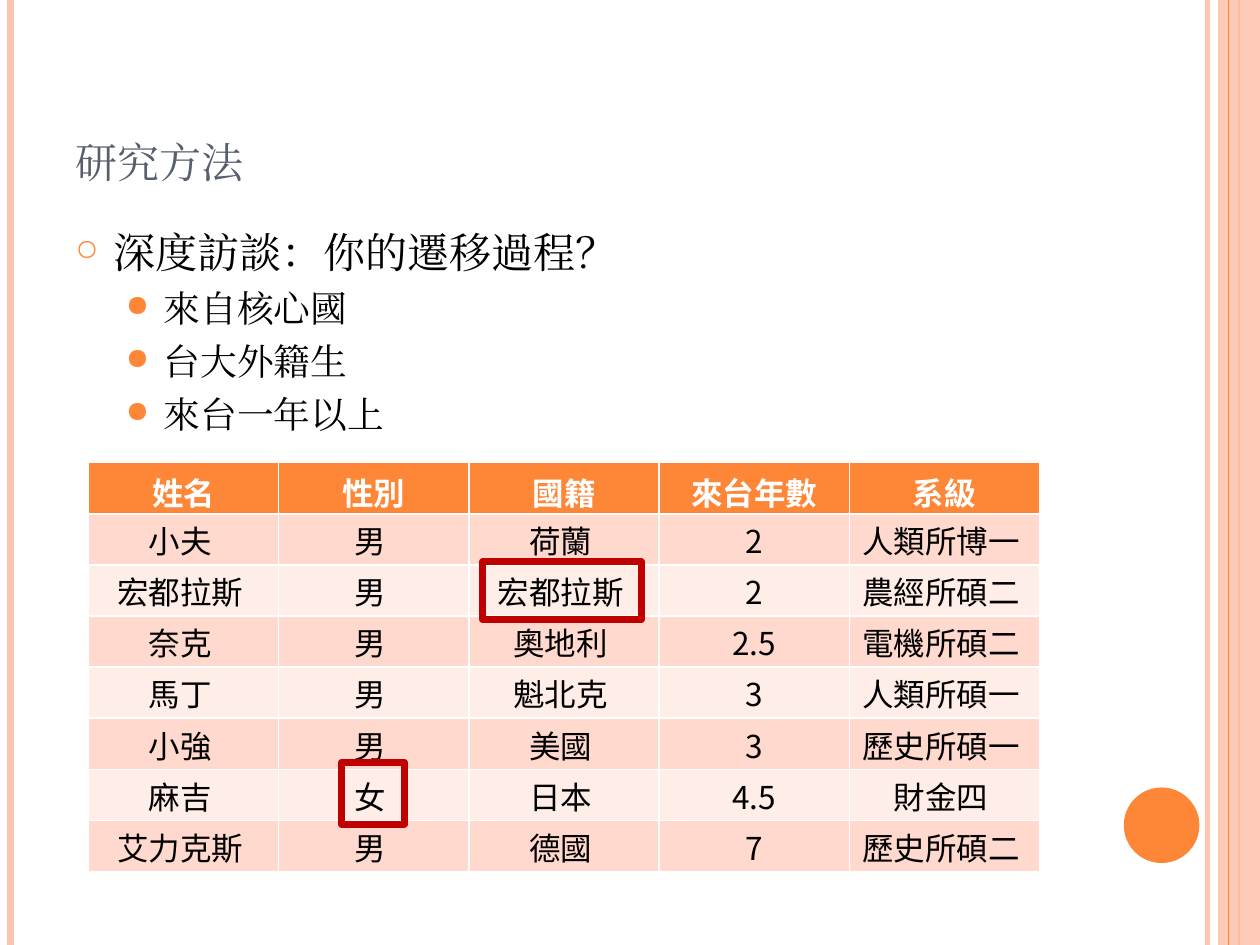
from lxml import etree
from pptx import Presentation
from pptx.dml.color import RGBColor
from pptx.enum import shapes, text
from pptx.oxml.ns import qn
from pptx.util import Pt

ORANGE, PEACH, RED = "FE8637", "FEC3AE", "C00000"
BANDS = ["FFD9CE", "FFEDE8"]
SERIF, CJK = "Cambria", "Noto Sans CJK TC"
HEIGHT = 540

HEADER = ["姓名", "性別", "國籍", "來台年數", "系級"]
STUDENTS = [
    ["小夫", "男", "荷蘭", "2", "人類所博一"],
    ["宏都拉斯", "男", "宏都拉斯", "2", "農經所碩二"],
    ["奈克", "男", "奧地利", "2.5", "電機所碩二"],
    ["馬丁", "男", "魁北克", "3", "人類所碩一"],
    ["小強", "男", "美國", "3", "歷史所碩一"],
    ["麻吉", "女", "日本", "4.5", "財金四"],
    ["艾力克斯", "男", "德國", "7", "歷史所碩二"],
]
CRITERIA = ["來自核心國", "台大外籍生", "來台一年以上"]
LEVELS = [
    dict(size=24, left=21.6, before=6, bullet="○", bullet_size=70),
    dict(size=21, left=50.4, before=5, bullet="●", bullet_size=80),
]


def rgb(value):
    return RGBColor.from_string(value)


def set_alpha(sp, percent):
    """Make the only colour of a shape or line partly transparent."""
    color = next(sp._element.spPr.iter(qn("a:srgbClr")))
    etree.SubElement(color, qn("a:alpha")).set("val", str(percent * 1000))


def set_all(obj, values):
    for name, value in values.items():
        setattr(obj, name, value)


def add_run(p, words, size, color, font, ea_font, bold=False):
    r = p.add_run()
    r.text = words
    set_all(r.font, dict(size=Pt(size), name=font, bold=bold))
    r.font.color.rgb = rgb(color)
    etree.SubElement(r._r.get_or_add_rPr(), qn("a:ea")).set("typeface", ea_font)
    return r


def add_stripe(s, x, width, color, alpha=None):
    """Draw a vertical line over the full slide height."""
    line = s.shapes.add_connector(shapes.MSO_CONNECTOR.STRAIGHT, Pt(x), 0, Pt(x), Pt(HEIGHT))
    line.line.width = Pt(width)
    line.line.color.rgb = rgb(color)
    if alpha:
        set_alpha(line, alpha)
    etree.SubElement(line._element.spPr, qn("a:effectLst"))


def add_filled(s, kind, box, color, alpha=None):
    sp = s.shapes.add_shape(kind, *map(Pt, box))
    sp.shadow.inherit = False
    sp.fill.solid()
    sp.fill.fore_color.rgb = rgb(color)
    if alpha:
        set_alpha(sp, alpha)
    sp.line.fill.background()


def add_frame(s, box):
    """Mark a table cell with a red outline."""
    sp = s.shapes.add_shape(shapes.MSO_SHAPE.RECTANGLE, *map(Pt, box))
    sp.shadow.inherit = False
    sp.fill.background()
    sp.line.width = Pt(4)
    sp.line.color.rgb = rgb(RED)


def add_text_box(s, box, anchor):
    tf = s.shapes.add_textbox(*map(Pt, box)).text_frame
    set_all(tf, dict(word_wrap=True, vertical_anchor=anchor))
    return tf


def add_bullet(p, words, level):
    fmt = LEVELS[level]
    p.level = level
    p.space_before = Pt(fmt["before"])
    pPr = p._p.get_or_add_pPr()
    pPr.set("marL", str(Pt(fmt["left"])))
    pPr.set("indent", str(Pt(-21.6)))
    color = etree.SubElement(pPr, qn("a:buClr"))
    etree.SubElement(color, qn("a:srgbClr")).set("val", ORANGE)
    etree.SubElement(pPr, qn("a:buSzPct")).set("val", str(fmt["bullet_size"] * 1000))
    etree.SubElement(pPr, qn("a:buChar")).set("char", fmt["bullet"])
    add_run(p, words, fmt["size"], "000000", SERIF, SERIF)


def fill_cell(cell, words, fill, color, font, bold=False):
    cell.fill.solid()
    cell.fill.fore_color.rgb = rgb(fill)
    p = cell.text_frame.paragraphs[0]
    p.alignment = text.PP_ALIGN.CENTER
    add_run(p, words, 18, color, font, CJK, bold)


def add_student_table(s):
    rows, cols = len(STUDENTS) + 1, len(HEADER)
    table = s.shapes.add_table(rows, cols, Pt(50.6), Pt(264.4), Pt(543.5), Pt(233.6)).table
    for column in table.columns:
        column.width = Pt(108.7)
    for row in table.rows:
        row.height = Pt(29.2)
    for j, words in enumerate(HEADER):
        fill_cell(table.cell(0, j), words, ORANGE, "FFFFFF", SERIF, True)
    for i, student in enumerate(STUDENTS):
        for j, words in enumerate(student):
            cell = table.cell(i + 1, j)
            fill_cell(cell, words, BANDS[i % 2], "000000", CJK)
            # Words sit slightly left of centre, numbers are centred
            right = 0.7 if words[0].isdigit() else 4.7
            set_all(cell, dict(vertical_anchor=text.MSO_ANCHOR.MIDDLE, margin_left=Pt(0.7),
                               margin_top=Pt(0.7), margin_right=Pt(right), margin_bottom=0))


def add_side_decoration(s):
    add_stripe(s, 690, 3, PEACH, 93)
    add_stripe(s, 6, 4.5, PEACH)
    add_stripe(s, 708, 1.5, ORANGE)
    add_filled(s, shapes.MSO_SHAPE.RECTANGLE, (696, 0, 24, HEIGHT), PEACH, 87)
    add_stripe(s, 702, 0.75, ORANGE)
    add_filled(s, shapes.MSO_SHAPE.OVAL, (642.2, 450, 43.2, 43.2), ORANGE)


def main():
    prs = Presentation()
    prs.slide_width, prs.slide_height = Pt(720), Pt(HEIGHT)
    s = prs.slides.add_slide(prs.slide_layouts[6])
    add_side_decoration(s)

    title = add_text_box(s, (36, 21.6, 588, 90), text.MSO_ANCHOR.BOTTOM)
    r = add_run(title.paragraphs[0], "研究方法", 30, "575F6D", SERIF, SERIF)
    r._r.get_or_add_rPr().set("cap", "small")

    body = add_text_box(s, (36, 126, 588, 384), text.MSO_ANCHOR.TOP)
    add_bullet(body.paragraphs[0], "深度訪談：你的遷移過程？", 0)
    for words in CRITERIA:
        add_bullet(body.add_paragraph(), words, 1)

    add_student_table(s)
    add_frame(s, (195.1, 435.6, 36, 35.3))
    add_frame(s, (275.8, 321.1, 90.7, 33.1))
    prs.save("out.pptx")


if __name__ == "__main__":
    main()
